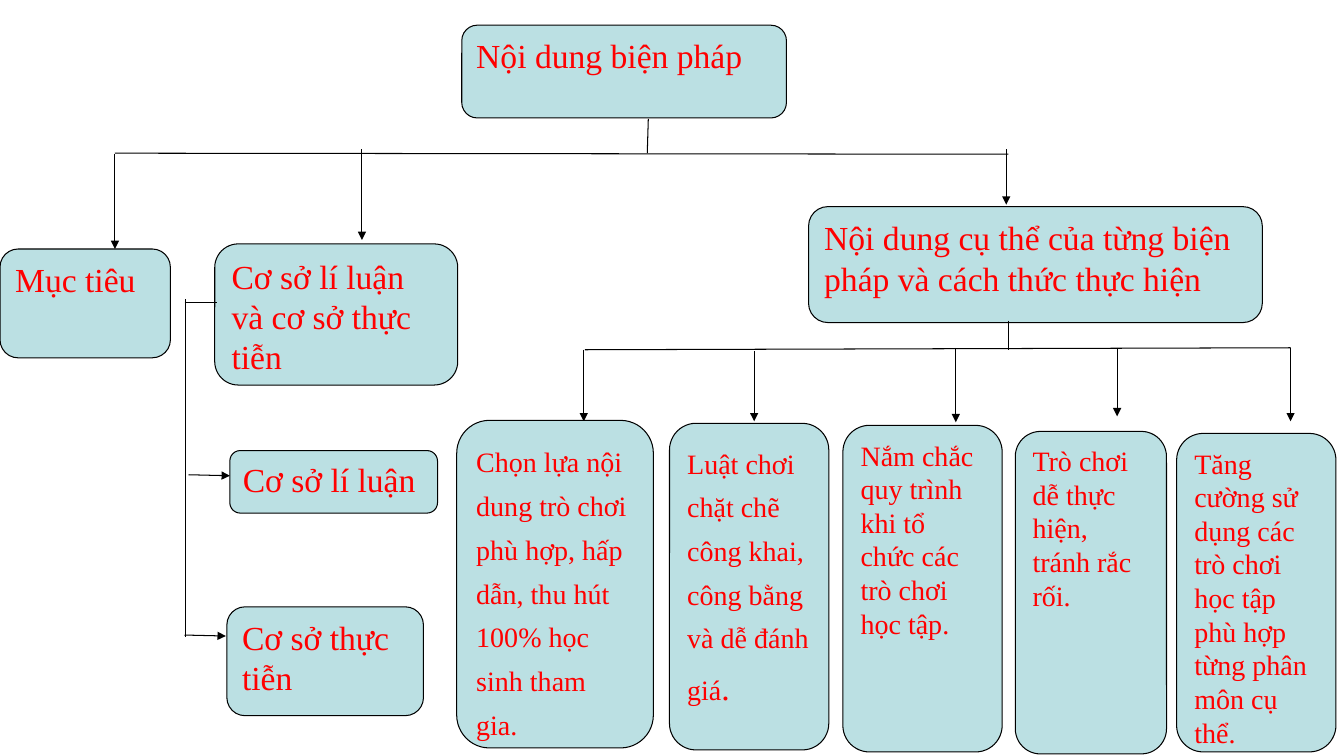
from lxml.etree import SubElement
from pptx import Presentation
from pptx.dml.color import RGBColor
from pptx.enum.shapes import MSO_CONNECTOR, MSO_SHAPE
from pptx.enum.text import MSO_ANCHOR, PP_ALIGN
from pptx.oxml.ns import qn
from pptx.util import Pt

PX = 9144
SLIDE = (1333, 750)
FONT = "Times New Roman"
BOX_FILL, INK, TEXT = "BBE0E3", "000000", "FF0000"

TOPICS = [
    ("Nội dung biện pháp", (458, 25, 322, 92)),
    ("Mục tiêu", (0, 247, 169, 108)),
    ("Cơ sở lí luận và cơ sở thực tiễn", (213, 242, 241, 140)),
    ("Nội dung cụ thể của từng biện pháp và cách thức thực hiện", (802, 205, 450, 115)),
    ("Cơ sở lí luận", (228, 447, 206, 62)),
    ("Cơ sở thực tiễn", (225, 602, 195, 108)),
]
SPACED = {"line_spacing": 1.3, "space_after": 8}
MEASURES = [
    (["Chọn lựa nội dung trò chơi phù hợp, hấp dẫn, thu hút 100% học sinh tham gia."],
     (453, 417, 195, 325), SPACED),
    (["Luật chơi chặt chẽ công khai, công bằng và dễ đánh giá", (".", 24)],
     (664, 420, 158, 324), SPACED),
    (["Nắm chắc quy trình khi tổ chức các trò chơi học tập."], (836, 422, 158, 324), {}),
    (["Trò chơi dễ thực hiện, tránh rắc rối."], (1007, 428, 150, 320), {}),
    (["Tăng cường sử dụng các trò chơi học tập phù hợp từng phân môn cụ thể."],
     (1167, 430, 158, 316), {}),
]
BRANCHES = [
    (643, 118, 642, 152), (114, 152, 1000, 153), (183, 300, 215, 300),
    (184, 297, 184, 632), (580, 347, 1280, 345), (1000, 318, 1000, 347),
]
DOWN_ARROWS = [
    (114, 153, 247), (359, 148, 238), (998, 148, 203),
    (579, 347, 418), (748, 348, 418), (948, 345, 419),
    (1108, 345, 413), (1280, 345, 418),
]
SIDE_ARROWS = [(187, 471, 228, 472), (183, 630, 224, 631)]


def color(code):
    return RGBColor.from_string(code)


def px(values):
    return [value * PX for value in values]


def write(frame, pieces, size=24, line_spacing=None, space_after=None):
    frame.word_wrap = True
    frame.vertical_anchor = MSO_ANCHOR.TOP
    paragraph = frame.paragraphs[0]
    paragraph.alignment = PP_ALIGN.LEFT
    if line_spacing:
        paragraph.line_spacing = line_spacing
    if space_after:
        paragraph.space_after = Pt(space_after)
    for piece in pieces:
        words, points = piece if isinstance(piece, tuple) else (piece, size)
        run = paragraph.add_run()
        run.text = words
        run.font.name = FONT
        run.font.size = Pt(points)
        run.font.color.rgb = color(TEXT)


def add_box(slide, pieces, place, **text_format):
    box = slide.shapes.add_shape(MSO_SHAPE.ROUNDED_RECTANGLE, *px(place))
    box.shadow.inherit = False
    box.fill.solid()
    box.fill.fore_color.rgb = color(BOX_FILL)
    box.line.color.rgb = color(INK)
    box.line.width = Pt(0.75)
    write(box.text_frame, pieces, **text_format)


def add_line(slide, ends, arrow=False):
    line = slide.shapes.add_connector(MSO_CONNECTOR.STRAIGHT, *px(ends))
    line.line.color.rgb = color(INK)
    line.line.width = Pt(0.75)
    if arrow:
        SubElement(line.line._get_or_add_ln(), qn("a:tailEnd"), type="triangle")
    SubElement(line._element.spPr, qn("a:effectLst"))


def main():
    deck = Presentation()
    deck.slide_width, deck.slide_height = px(SLIDE)
    slide = deck.slides.add_slide(deck.slide_layouts[6])
    for topic, place in TOPICS:
        add_box(slide, [topic], place)
    for ends in BRANCHES:
        add_line(slide, ends)
    for x, top, bottom in DOWN_ARROWS:
        add_line(slide, (x, top, x, bottom), arrow=True)
    for ends in SIDE_ARROWS:
        add_line(slide, ends, arrow=True)
    for pieces, place, spacing in MEASURES:
        add_box(slide, pieces, place, size=20, **spacing)
    deck.save("out.pptx")


if __name__ == "__main__":
    main()
